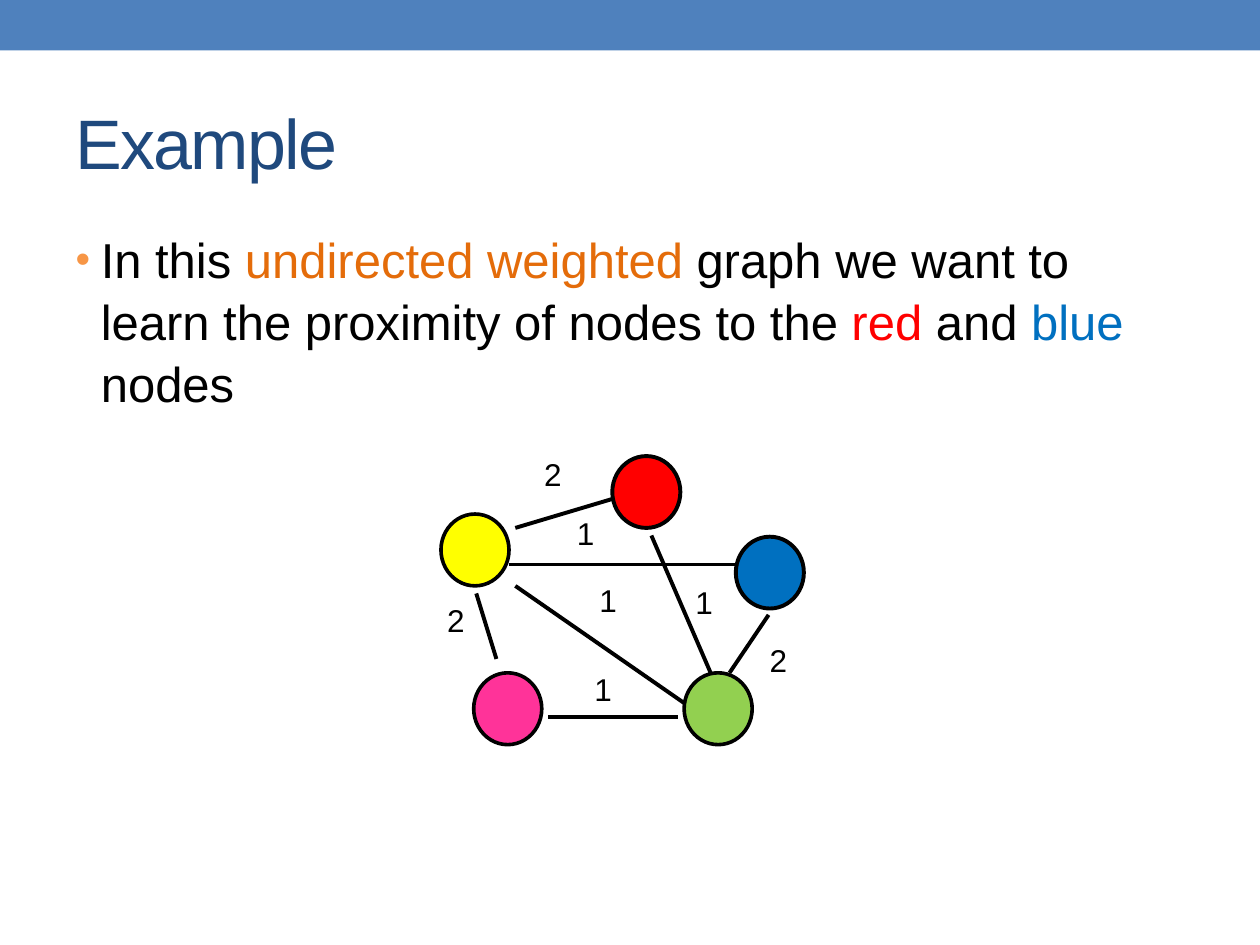
from lxml import etree
from pptx import Presentation
from pptx import util as u
from pptx.dml.color import RGBColor
from pptx.enum import shapes, text
from pptx.oxml.ns import qn

COLORS = {
    "bar": "4F81BD", "title": "1F497D", "bullet": "F79646", "ink": "000000",
    "orange": "E46C0A", "red": "FF0000", "blue": "0070C0",
    "green": "92D050", "pink": "FF3399", "yellow": "FFFF00",
}
NODE_SIZE = (0.54, 0.57)
LABEL_SIZE = (0.34, 0.4)

EDGES = [
    ((4.35, 5.69), (5.38, 5.69)),
    ((3.94, 5.23), (3.78, 4.71)),
    ((4.09, 4.19), (4.86, 3.96)),
    ((4.04, 4.48), (5.84, 4.48)),
    ((5.64, 5.34), (5.17, 4.25)),
    ((5.79, 5.34), (6.1, 4.88)),
    ((5.43, 5.58), (4.09, 4.65)),
]
NODES = [
    ("red", 4.86, 3.62, 2.25),
    ("blue", 5.84, 4.26, 2.25),
    ("green", 5.43, 5.34, 2.08),
    ("pink", 3.76, 5.34, 2.08),
    ("yellow", 3.5, 4.08, 2.08),
]
WEIGHTS = [
    ("2", 4.22, 3.56), ("2", 3.45, 4.72), ("1", 4.48, 4.03),
    ("1", 4.66, 4.56), ("1", 4.62, 5.27), ("2", 6.01, 5.04),
    ("1", 5.42, 4.58),
]
STATEMENT = [
    ("In this ", "ink"), ("undirected weighted", "orange"),
    (" graph we want to learn the proximity of nodes to the ", "ink"),
    ("red", "red"), (" and ", "ink"), ("blue", "blue"), (" nodes", "ink"),
]


def color(name):
    return RGBColor.from_string(COLORS[name])


class SlideBuilder:
    font = "Arial"

    def __init__(self, page):
        self.page = page
        self.target = page.shapes

    def start_group(self):
        self.target = self.page.shapes.add_group_shape().shapes

    def place(self, item, left, top, width, height):
        item.left, item.top = u.Inches(left), u.Inches(top)
        item.width, item.height = u.Inches(width), u.Inches(height)

    def set_font(self, paragraph, size, name=None):
        paragraph.font.name = self.font
        paragraph.font.size = u.Pt(size)
        if name:
            paragraph.font.color.rgb = color(name)

    def shape(self, kind, at, fill, line_width=None):
        item = self.target.add_shape(kind, *map(u.Inches, at))
        item.shadow.inherit = False
        item.fill.solid()
        item.fill.fore_color.rgb = color(fill)
        if line_width:
            item.line.color.rgb = color("ink")
            item.line.width = u.Pt(line_width)
        else:
            item.line.fill.background()

    def edge(self, start, end):
        line = self.target.add_connector(
            shapes.MSO_CONNECTOR.STRAIGHT, *map(u.Inches, start + end))
        line.line.color.rgb = color("ink")
        line.line.width = u.Pt(2.25)
        etree.SubElement(line._element.spPr, qn("a:effectLst"))

    def label(self, words, left, top):
        box = self.target.add_textbox(*map(u.Inches, (left, top) + LABEL_SIZE))
        frame = box.text_frame
        frame.word_wrap = False
        frame.auto_size = text.MSO_AUTO_SIZE.SHAPE_TO_FIT_TEXT
        para = frame.paragraphs[0]
        para.text = words
        self.set_font(para, 18, "ink")

    def title(self, words):
        box = self.page.shapes.title
        self.place(box, 0.5, 0.58, 9, 1.08)
        frame = box.text_frame
        frame.vertical_anchor = text.MSO_ANCHOR.MIDDLE
        frame.auto_size = text.MSO_AUTO_SIZE.NONE
        para = frame.paragraphs[0]
        para.alignment = text.PP_ALIGN.LEFT
        span = para.add_run()
        span.text = words
        span.font._element.set("spc", "-100")
        self.set_font(para, 40, "title")

    def bullet(self, spans):
        box = self.page.placeholders[1]
        self.place(box, 0.5, 1.75, 9, 5.33)
        frame = box.text_frame
        frame.auto_size = text.MSO_AUTO_SIZE.NONE
        para = frame.paragraphs[0]
        para.space_before = u.Pt(0)
        para.line_spacing = 1.05
        props = para._element.get_or_add_pPr()
        props.set("marL", str(u.Inches(0.2)))
        props.set("indent", str(u.Inches(-0.2)))
        tint = etree.SubElement(props, qn("a:buClr"))
        etree.SubElement(tint, qn("a:srgbClr"), val=COLORS["bullet"])
        etree.SubElement(props, qn("a:buSzPct"), val="85000")
        etree.SubElement(props, qn("a:buFont"), typeface=self.font)
        etree.SubElement(props, qn("a:buChar"), char="•")
        self.set_font(para, 28)
        for words, name in spans:
            span = para.add_run()
            span.text = words
            span.font.color.rgb = color(name)


def main():
    deck = Presentation()
    deck.slide_width, deck.slide_height = u.Inches(10), u.Inches(7.5)
    builder = SlideBuilder(deck.slides.add_slide(deck.slide_layouts[1]))
    builder.shape(shapes.MSO_SHAPE.RECTANGLE, (0, 0, 10, 0.4), "bar")
    builder.title("Example")
    builder.bullet(STATEMENT)
    builder.start_group()
    for start, end in EDGES:
        builder.edge(start, end)
    for name, left, top, line_width in NODES:
        builder.shape(shapes.MSO_SHAPE.OVAL, (left, top) + NODE_SIZE,
                      name, line_width)
    for words, left, top in WEIGHTS:
        builder.label(words, left, top)
    deck.save("out.pptx")


if __name__ == "__main__":
    main()
